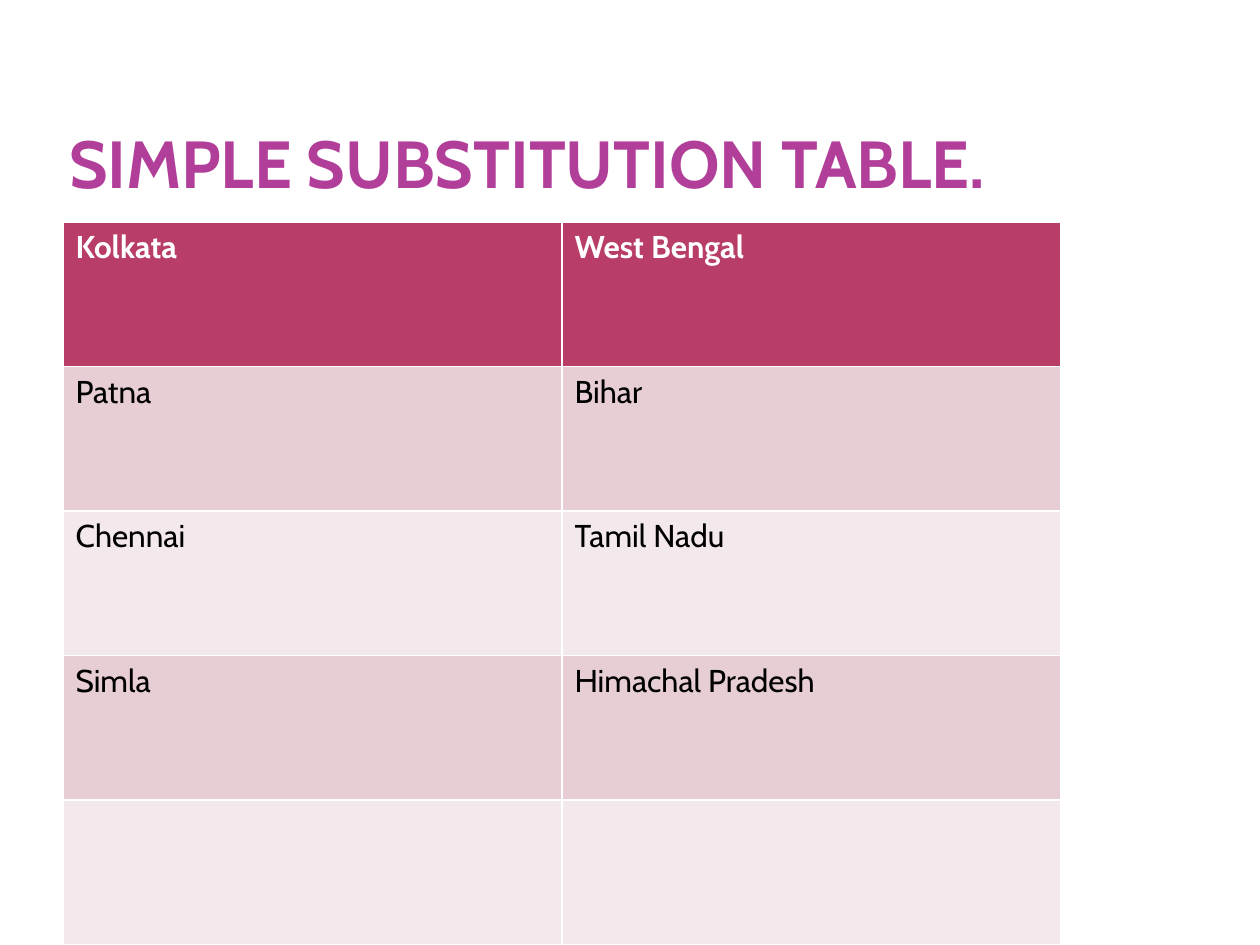
from dataclasses import dataclass

from pptx import Presentation
from pptx.dml.color import RGBColor
from pptx.enum.text import MSO_ANCHOR, PP_ALIGN
from pptx.util import Pt

BOTTOM, LEFT = MSO_ANCHOR.BOTTOM, PP_ALIGN.LEFT
FONT = "Cabin"
PURPLE = RGBColor(0xB1, 0x3F, 0x9A)
CRIMSON = RGBColor(0xB8, 0x3D, 0x68)
ROSE = RGBColor(0xE6, 0xCE, 0xD4)
PALE_ROSE = RGBColor(0xF3, 0xE8, 0xEB)
WHITE = RGBColor(0xFF, 0xFF, 0xFF)
BLACK = RGBColor(0x00, 0x00, 0x00)


def px(n: int) -> int:
    """Convert px, 126 to the inch, to EMU."""
    return round(n * 914400 / 126)


@dataclass
class Row:
    city: str
    state: str
    fill: RGBColor
    color: RGBColor = BLACK
    bold: bool = False


ROWS = [
    Row("Kolkata", "West Bengal", CRIMSON, WHITE, True),
    Row("Patna", "Bihar", ROSE),
    Row("Chennai", "Tamil Nadu", PALE_ROSE),
    Row("Simla", "Himachal Pradesh", ROSE),
    Row("", "", PALE_ROSE),
]


def style(p, size: int, color: RGBColor, bold: bool) -> None:
    p.font.name = FONT
    p.font.size = Pt(size)
    p.font.bold = bold
    p.font.color.rgb = color


def add_title(s, text: str) -> None:
    sp = s.shapes.title
    sp.left, sp.top, sp.width, sp.height = px(63), px(44), px(998), px(158)
    tf = sp.text_frame
    tf.text = text
    tf.word_wrap = True
    tf.vertical_anchor = BOTTOM
    tf.margin_left = tf.margin_right = px(6)
    tf.margin_top = tf.margin_bottom = 0
    p = tf.paragraphs[0]
    p.alignment = LEFT
    style(p, 38, PURPLE, True)


def add_city_table(s, rows: list[Row]) -> None:
    # The default table style supplies the white rules between cells
    table = s.shapes.add_table(
        len(rows), 2, px(63), px(222), px(998), px(723)).table
    for i, row in enumerate(rows):
        for j, text in enumerate((row.city, row.state)):
            cell = table.cell(i, j)
            cell.fill.solid()
            cell.fill.fore_color.rgb = row.fill
            cell.text = text
            style(cell.text_frame.paragraphs[0], 18, row.color, row.bold)


def main() -> None:
    prs = Presentation()
    prs.slide_width, prs.slide_height = px(1260), px(945)
    s = prs.slides.add_slide(prs.slide_layouts[5])  # title only
    add_title(s, "SIMPLE SUBSTITUTION TABLE.")
    add_city_table(s, ROWS)
    prs.save("out.pptx")


if __name__ == "__main__":
    main()
